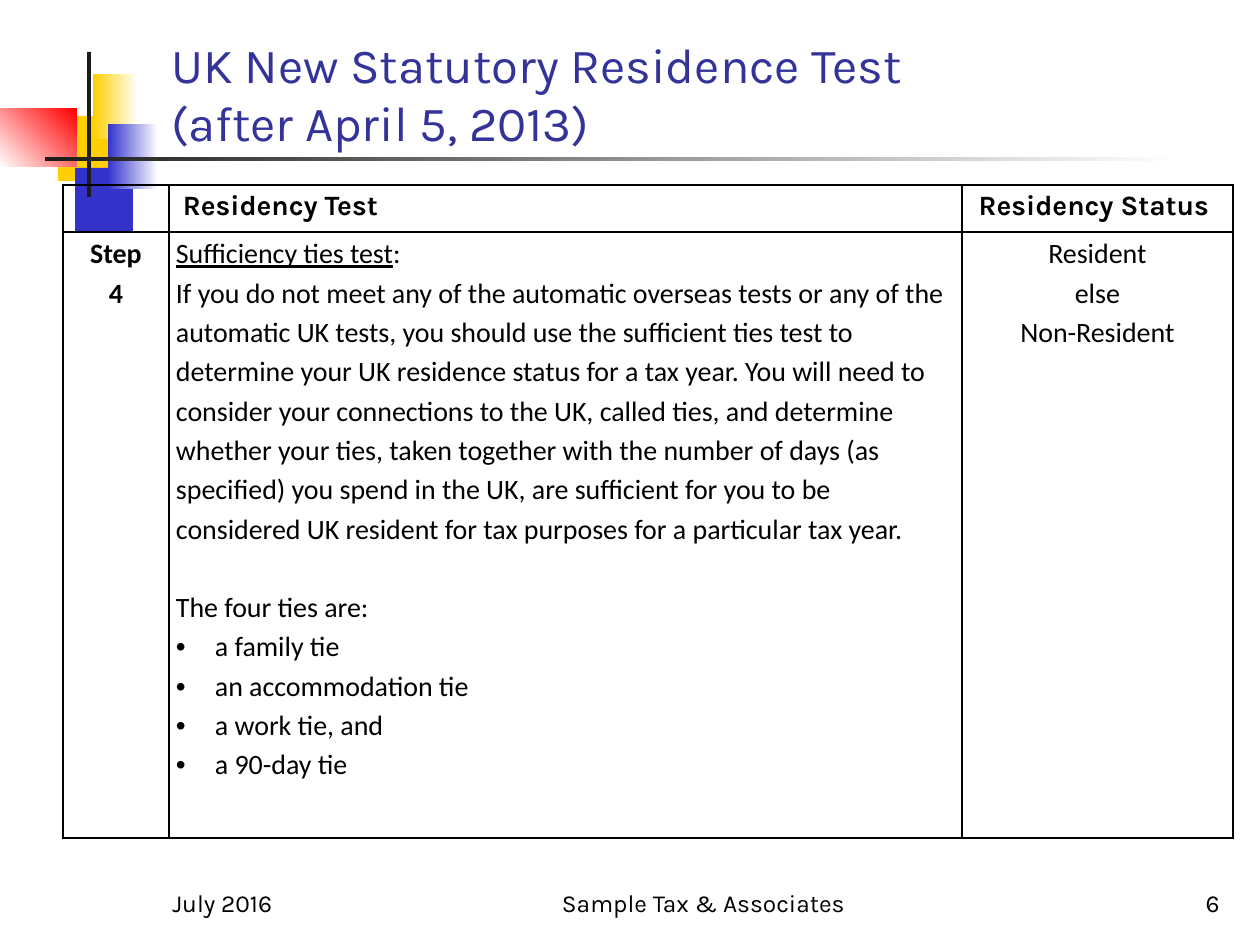
from dataclasses import dataclass

from lxml import etree
from pptx import Presentation
from pptx.dml.color import RGBColor
from pptx.enum import shapes, text
from pptx.oxml import ns
from pptx.util import Emu, Pt

PX = 914400 / 126


@dataclass(frozen=True)
class Theme:
    heading_font: str = "Karla"
    body_font: str = "Calibri"
    title_size: int = 28
    table_size: int = 16
    footer_size: int = 14
    title: str = "333399"
    ink: str = "000000"
    bar: str = "1C1C1C"
    yellow: str = "FFCF01"
    blue: str = "3333CC"
    red: str = "FF0000"
    white: str = "FFFFFF"
    line_spacing: float = 1.15
    blank_line: float = 22.4


THEME = Theme()
LEFT, CENTER, RIGHT = text.PP_ALIGN.LEFT, text.PP_ALIGN.CENTER, text.PP_ALIGN.RIGHT

DECORATIONS = [
    ((58, 116, 60, 65), (THEME.yellow,), 0),
    ((75, 168, 58, 65), (THEME.blue,), 0),
    ((93, 74, 45, 65), (THEME.yellow, THEME.white), 0),
    ((108, 124, 50, 65), (THEME.blue, THEME.white), 0),
    ((0, 109, 77, 58), (THEME.white, THEME.red), 45),
    ((87, 52, 4, 145), (THEME.bar,), 0),
    ((45, 157, 1134, 4), (THEME.bar, THEME.white), 0),
]

FOOTERS = [
    ((160, 861, 262, 63), "July 2016", LEFT),
    ((504, 861, 399, 63), "Sample Tax & Associates", CENTER),
    ((970, 861, 262, 63), "6", RIGHT),
]

EXPLANATION = (
    "If you do not meet any of the automatic overseas tests or any of the "
    "automatic UK tests, you should use the sufficient ties test to determine "
    "your UK residence status for a tax year. You will need to consider your "
    "connections to the UK, called ties, and determine whether your ties, taken "
    "together with the number of days (as specified) you spend in the UK, are "
    "sufficient for you to be considered UK resident for tax purposes for a "
    "particular tax year."
)
TIES = ["a family tie", "an accommodation tie", "a work tie, and", "a 90-day tie"]
COLUMNS = [106, 793, 271]
ROWS = [47, 606]


def px(length):
    return Emu(round(length * PX))


def add_run(paragraph, words, size, font, color=THEME.ink, bold=False, underline=False):
    run = paragraph.add_run()
    run.text = words
    run.font.size = Pt(size)
    run.font.name = font
    run.font.bold = bold
    run.font.underline = underline
    run.font.color.rgb = RGBColor.from_string(color)


def add_decoration(slide, box, colors, angle):
    block = slide.shapes.add_shape(shapes.MSO_SHAPE.RECTANGLE, *map(px, box))
    block.shadow.inherit = False
    block.line.fill.background()
    if len(colors) == 1:
        block.fill.solid()
        block.fill.fore_color.rgb = RGBColor.from_string(colors[0])
        return
    block.fill.gradient()
    block.fill.gradient_angle = angle
    for stop, color, position in zip(block.fill.gradient_stops, colors, (0, 1)):
        stop.color.rgb = RGBColor.from_string(color)
        stop.position = position


def add_text(slide, box, lines, size, color=THEME.ink, align=LEFT):
    frame = slide.shapes.add_textbox(*map(px, box)).text_frame
    frame.word_wrap = True
    frame.vertical_anchor = text.MSO_ANCHOR.BOTTOM
    paragraph = frame.paragraphs[0]
    paragraph.alignment = align
    for index, line in enumerate(lines):
        if index:
            paragraph.add_line_break()
        add_run(paragraph, line, size, THEME.heading_font, color)


def set_borders(cell):
    properties = cell._tc.get_or_add_tcPr()
    for position, side in enumerate(("lnL", "lnR", "lnT", "lnB")):
        border = etree.Element(ns.qn(f"a:{side}"), w=str(Pt(1)))
        fill = etree.SubElement(border, ns.qn("a:solidFill"))
        etree.SubElement(fill, ns.qn("a:srgbClr"), val=THEME.ink)
        properties.insert(position, border)


def set_bullet(paragraph):
    properties = paragraph._p.get_or_add_pPr()
    properties.set("marL", str(px(39)))
    properties.set("indent", str(px(-39)))
    etree.SubElement(properties, ns.qn("a:buFont"), typeface="Arial")
    etree.SubElement(properties, ns.qn("a:buChar"), char="•")


def write_cell(cell, lines, align=LEFT, font=THEME.body_font, bold=False):
    frame = cell.text_frame
    for index, line in enumerate(lines):
        paragraph = frame.add_paragraph() if index else frame.paragraphs[0]
        paragraph.alignment = align
        paragraph.line_spacing = THEME.line_spacing
        add_run(paragraph, line, THEME.table_size, font, bold=bold)
    return frame.paragraphs


def add_residency_table(slide):
    box = (63, 185, sum(COLUMNS), sum(ROWS))
    table = slide.shapes.add_table(len(ROWS), len(COLUMNS), *map(px, box)).table
    table.first_row = table.horz_banding = False
    for column, width in zip(table.columns, COLUMNS):
        column.width = px(width)
    for row, height in zip(table.rows, ROWS):
        row.height = px(height)
    for cell in table.iter_cells():
        cell.margin_left = cell.margin_right = px(7)
        cell.margin_top = cell.margin_bottom = 0
        cell.fill.background()
        set_borders(cell)

    test_heading, status_heading = table.cell(0, 1), table.cell(0, 2)
    test_heading.margin_left = status_heading.margin_right = px(14)
    write_cell(test_heading, ["Residency Test"], font=THEME.heading_font, bold=True)
    write_cell(status_heading, ["Residency Status"], CENTER, THEME.heading_font, True)

    write_cell(table.cell(1, 0), ["Step", "4"], CENTER, bold=True)
    write_cell(table.cell(1, 2), ["Resident", "else", "Non-Resident"], CENTER)
    test_lines = ["Sufficiency ties test", EXPLANATION, "The four ties are:", *TIES]
    name, _, ties_intro, *ties = write_cell(table.cell(1, 1), test_lines)
    name.runs[0].font.underline = True
    add_run(name, ":", THEME.table_size, THEME.body_font)
    ties_intro.space_before = Pt(THEME.blank_line)
    for tie in ties:
        set_bullet(tie)


def main():
    deck = Presentation()
    deck.slide_width, deck.slide_height = px(1260), px(945)
    slide = deck.slides.add_slide(deck.slide_layouts[6])
    for box, colors, angle in DECORATIONS:
        add_decoration(slide, box, colors, angle)
    title = ["UK New Statutory Residence Test", "(after April 5, 2013)"]
    add_text(slide, (159, 29, 1074, 129), title, THEME.title_size, THEME.title)
    for box, words, align in FOOTERS:
        add_text(slide, box, [words], THEME.footer_size, align=align)
    add_residency_table(slide)
    deck.save("out.pptx")


if __name__ == "__main__":
    main()
